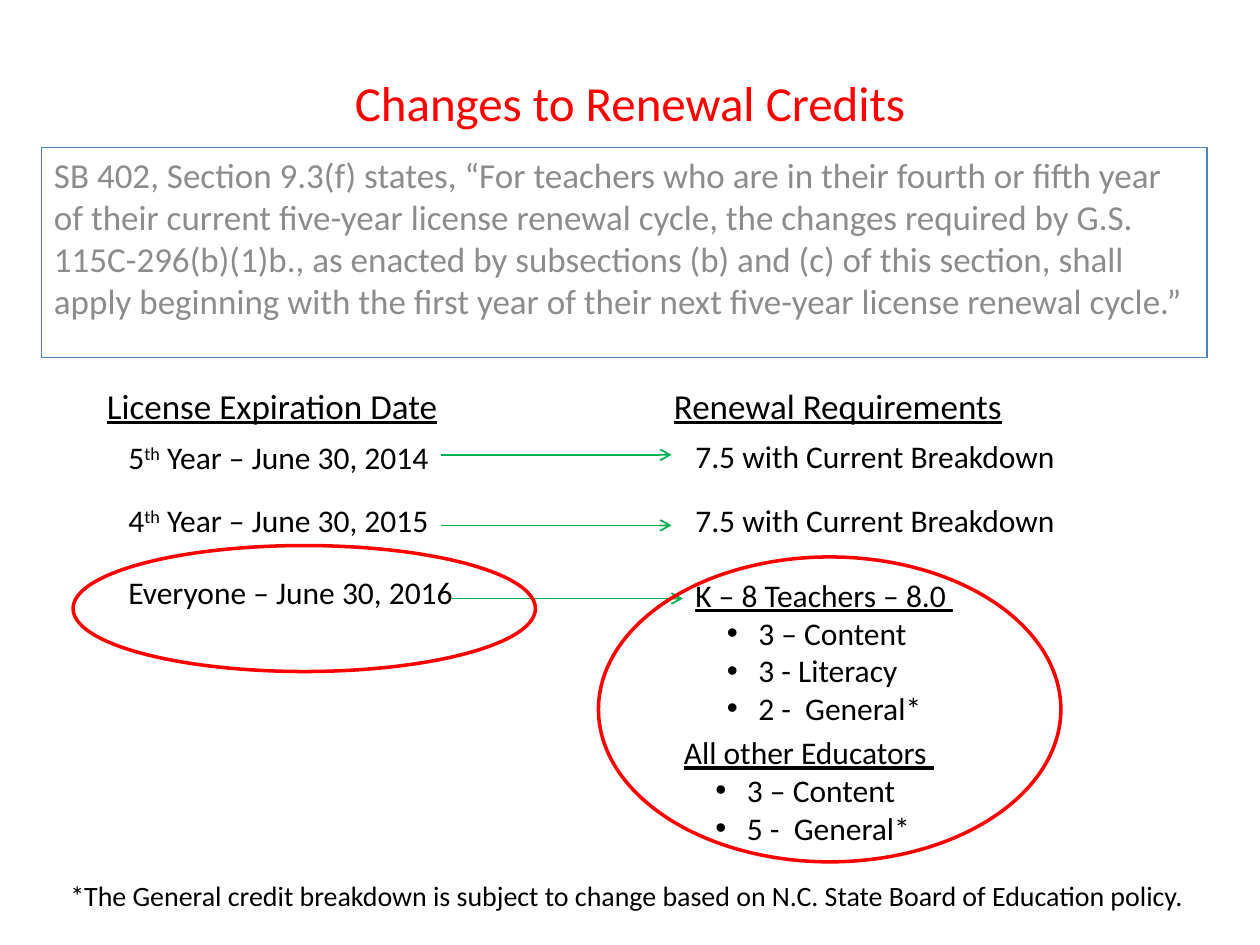
from dataclasses import dataclass

from lxml import etree
from pptx import Presentation
from pptx.enum import shapes, text
from pptx.oxml import ns
from pptx.util import Inches, Pt
from pptx.dml import color

COLORS = {"red": "FF0000", "gray": "8C8C8C", "black": "000000", "blue": "4F81BD", "green": "00B050"}
FONT = "Calibri"


@dataclass
class Label:
    """A text box: lines split at ^ marks give every second span as superscript."""
    left: float
    top: float
    width: float
    height: float
    words: str
    size: int = 18
    color: str = "black"
    underline: bool = False
    bullets: tuple[str, ...] = ()
    align: text.PP_ALIGN = text.PP_ALIGN.LEFT
    anchor: text.MSO_ANCHOR = text.MSO_ANCHOR.TOP
    grow: bool = True
    wrap: bool = True
    before: int = 0
    border: str = ""


@dataclass
class Arrow:
    """A horizontal arrow."""
    start: float
    end: float
    height: float


@dataclass
class Ring:
    """An unfilled ellipse around a group of text."""
    left: float
    top: float
    width: float
    height: float


def rgb(name: str) -> color.RGBColor:
    """Return the named colour."""
    return color.RGBColor.from_string(COLORS[name])


def set_line(shape, name: str, width: float) -> None:
    """Set the outline colour and width."""
    shape.line.color.rgb = rgb(name)
    shape.line.width = Pt(width)


def add_spans(para, words: str, label: Label, underline: bool) -> None:
    """Write the spans of one paragraph."""
    for index, part in enumerate(words.split("^")):
        span = para.add_run()
        span.text = part
        formats = {"name": FONT, "size": Pt(label.size), "underline": underline}
        for key, value in formats.items():
            setattr(span.font, key, value)
        span.font.color.rgb = rgb(label.color)
        if index % 2:
            span.font._element.set("baseline", "30000")


def add_bullet(para) -> None:
    """Give a paragraph a hanging round bullet."""
    para.level = 1
    props = para._p.get_or_add_pPr()
    props.set("marL", str(Inches(0.5)))
    props.set("indent", str(Inches(-0.25)))
    etree.SubElement(props, ns.qn("a:buFont")).set("typeface", "Arial")
    etree.SubElement(props, ns.qn("a:buChar")).set("char", "•")


def draw_label(page, label: Label) -> None:
    """Draw a text box with its heading and bullets."""
    box = page.shapes.add_textbox(*map(Inches, (label.left, label.top, label.width, label.height)))
    frame = box.text_frame
    fit = text.MSO_AUTO_SIZE.SHAPE_TO_FIT_TEXT if label.grow else text.MSO_AUTO_SIZE.NONE
    formats = {"word_wrap": label.wrap, "auto_size": fit, "vertical_anchor": label.anchor}
    for key, value in formats.items():
        setattr(frame, key, value)
    if label.border:
        set_line(box, label.border, 0.75)
    para = frame.paragraphs[0]
    para.alignment = label.align
    para.space_before = Pt(label.before)
    add_spans(para, label.words, label, label.underline)
    for words in label.bullets:
        para = frame.add_paragraph()
        add_bullet(para)
        add_spans(para, words, label, False)


def draw_arrow(page, arrow: Arrow) -> None:
    """Draw a green arrow pointing right."""
    ends = map(Inches, (arrow.start, arrow.height, arrow.end, arrow.height))
    line = page.shapes.add_connector(shapes.MSO_CONNECTOR.STRAIGHT, *ends)
    set_line(line, "green", 1)
    etree.SubElement(line.line._get_or_add_ln(), ns.qn("a:tailEnd")).set("type", "arrow")
    etree.SubElement(line._element.spPr, ns.qn("a:effectLst"))


def draw_ring(page, ring: Ring) -> None:
    """Draw a red ellipse."""
    place = map(Inches, (ring.left, ring.top, ring.width, ring.height))
    oval = page.shapes.add_shape(shapes.MSO_SHAPE.OVAL, *place)
    oval.shadow.inherit = False
    oval.fill.background()
    set_line(oval, "red", 2)


QUOTE = (
    "SB 402, Section 9.3(f) states, “For teachers who are in their fourth or fifth year of their "
    "current five-year license renewal cycle, the changes required by G.S. 115C-296(b)(1)b., as "
    "enacted by subsections (b) and (c) of this section, shall apply beginning with the first year "
    "of their next five-year license renewal cycle.”"
)
FOOTNOTE = "*The General credit breakdown is subject to change based on N.C. State Board of Education policy."
CURRENT = "7.5 with Current Breakdown"

LABELS = [
    Label(0.75, 0, 8.5, 1.61, "Changes to Renewal Credits", 28, "red", grow=False,
          align=text.PP_ALIGN.CENTER, anchor=text.MSO_ANCHOR.MIDDLE),
    Label(0.33, 1.17, 9.25, 1.67, QUOTE, 20, "gray", grow=False, before=4, border="blue"),
    Label(0.75, 3, 2.83, 0.44, "License Expiration Date", 20, underline=True),
    Label(5.25, 3, 2.83, 0.44, "Renewal Requirements", 20, underline=True),
    Label(0.92, 3.43, 2.83, 0.4, "5^th^ Year – June 30, 2014"),
    Label(0.92, 3.93, 2.83, 0.4, "4^th^ Year – June 30, 2015"),
    Label(0.92, 4.5, 2.83, 0.4, "Everyone – June 30, 2016"),
    Label(5.42, 3.42, 3.08, 0.4, CURRENT),
    Label(5.42, 4.52, 2.83, 1.31, "K – 8 Teachers – 8.0 ", underline=True,
          bullets=("3 – Content", "3 - Literacy", "2 -  General*")),
    Label(5.42, 3.93, 3.08, 0.4, CURRENT),
    Label(5.33, 5.77, 2.83, 1.01, "All other Educators ", underline=True,
          bullets=("3 – Content", "5 -  General*")),
    Label(0.46, 6.92, 9.15, 0.37, FOOTNOTE, 16, wrap=False),
]
ARROWS = [Arrow(3.5, 5.33, 3.61), Arrow(3.5, 5.33, 4.17), Arrow(3.58, 5.42, 4.75)]
RINGS = [Ring(0.58, 4.33, 3.67, 1), Ring(4.75, 4.42, 3.67, 2.42)]


def main() -> None:
    """Build the slide and save it."""
    deck = Presentation()
    deck.slide_width, deck.slide_height = Inches(10), Inches(7.5)
    page = deck.slides.add_slide(deck.slide_layouts[6])
    for draw, items in ((draw_label, LABELS), (draw_arrow, ARROWS), (draw_ring, RINGS)):
        for item in items:
            draw(page, item)
    deck.save("out.pptx")


if __name__ == "__main__":
    main()
